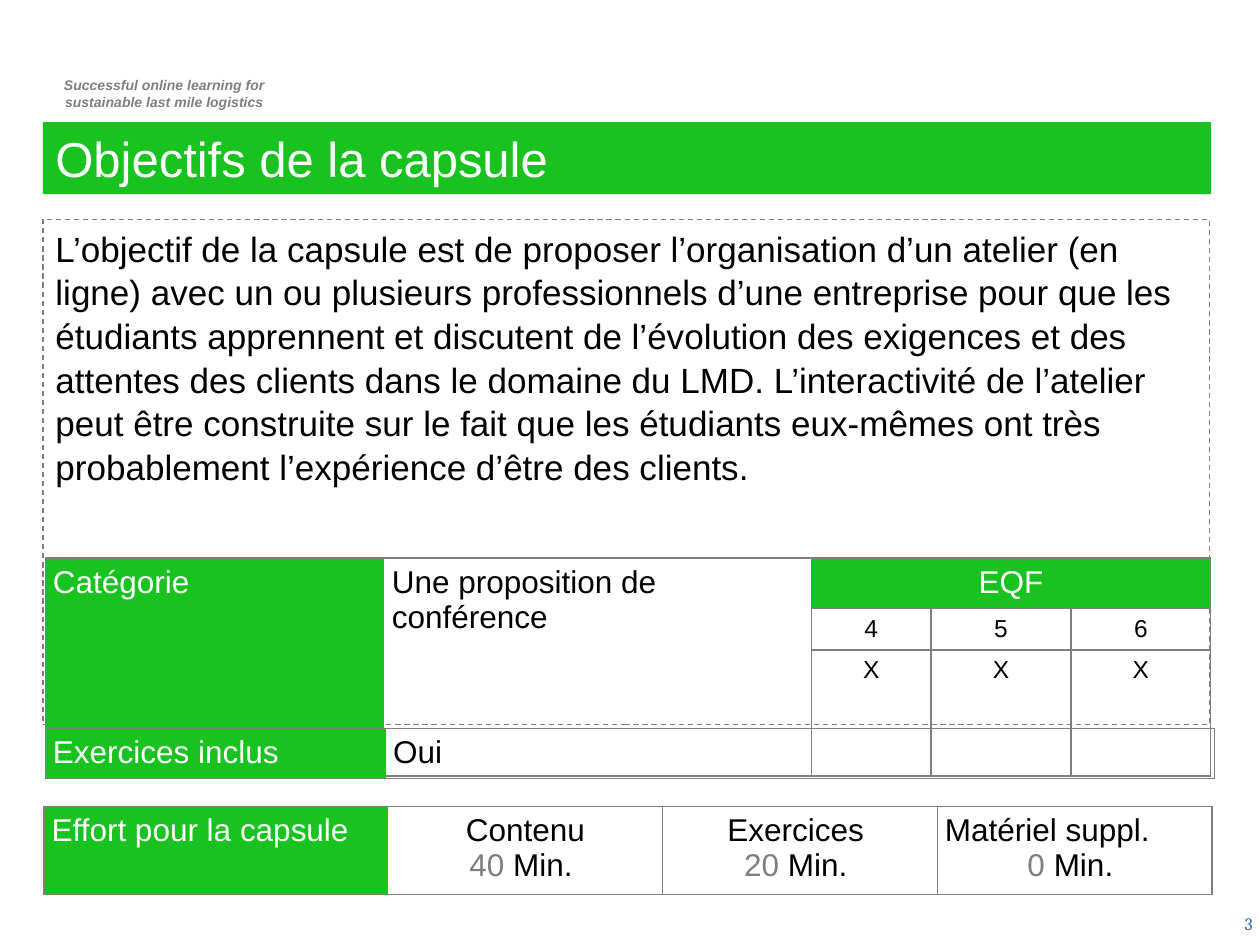
from dataclasses import dataclass

from lxml.etree import SubElement
from pptx import Presentation
from pptx.dml.color import RGBColor as RGB
from pptx.enum.dml import MSO_LINE as Dash
from pptx.enum.text import MSO_ANCHOR as Anchor, MSO_AUTO_SIZE as Fit, PP_ALIGN as Align
from pptx.oxml.ns import qn
from pptx.util import Inches, Pt


@dataclass(frozen=True)
class Theme:
    green: RGB = RGB(0x18, 0xC3, 0x20)
    grey: RGB = RGB(0x7F, 0x7F, 0x7F)
    blue: RGB = RGB(0x33, 0x66, 0xCC)
    white: RGB = RGB(255, 255, 255)
    black: RGB = RGB(0, 0, 0)
    font: str = "Arial"
    serif: str = "Cambria"
    title: int = 28
    body: int = 20
    cell: int = 18
    level: int = 14
    page: int = 10
    tag: int = 8
    rule: float = 0.96


THEME = Theme()
GOAL = (
    "L’objectif de la capsule est de proposer l’organisation d’un atelier (en ligne) "
    "avec un ou plusieurs professionnels d’une entreprise pour que les étudiants "
    "apprennent et discutent de l’évolution des exigences et des attentes des clients "
    "dans le domaine du LMD. L’interactivité de l’atelier peut être construite sur le "
    "fait que les étudiants eux-mêmes ont très probablement l’expérience d’être des clients."
)
EFFORT = [
    ("Contenu", "40 ", Align.CENTER),
    ("Exercices ", "20 ", Align.CENTER),
    ("Matériel suppl.", "0 ", Align.LEFT),
]


def style(para, size, colour, align=Align.LEFT, font=THEME.font):
    para.alignment = align
    for run in para.runs:
        run.font.name = font
        run.font.size = Pt(size)
        run.font.color.rgb = colour


def place(shape, box):
    shape.left, shape.top, shape.width, shape.height = map(Inches, box)
    frame = shape.text_frame
    frame.auto_size = Fit.NONE
    frame.word_wrap = True
    frame.vertical_anchor = Anchor.TOP
    return frame


def add_tag(slide, box):
    frame = place(slide.shapes.add_textbox(0, 0, 0, 0), box)
    frame.text = "Successful online learning for\nsustainable last mile logistics"
    for para in frame.paragraphs:
        style(para, THEME.tag, THEME.grey, Align.CENTER)
        for run in para.runs:
            run.font.bold = run.font.italic = True


def add_page(slide, box):
    frame = place(slide.shapes.add_textbox(0, 0, 0, 0), box)
    frame.vertical_anchor = Anchor.MIDDLE
    frame.text = "3"
    style(frame.paragraphs[0], THEME.page, THEME.blue, Align.RIGHT, THEME.serif)


def add_title(slide, box):
    shape = slide.shapes.title
    frame = place(shape, box)
    shape.fill.solid()
    shape.fill.fore_color.rgb = THEME.green
    frame.text = "Objectifs de la capsule"
    style(frame.paragraphs[0], THEME.title, THEME.white)


def add_goal(slide, box):
    shape = slide.placeholders[1]
    frame = place(shape, box)
    shape.line.color.rgb = THEME.grey
    shape.line.width = Pt(0.75)
    shape.line.dash_style = Dash.DASH
    frame.text = GOAL
    para = frame.paragraphs[0]
    props = para._p.get_or_add_pPr()
    props.set("marL", "0")
    props.set("indent", "0")
    SubElement(props, qn("a:buNone"))
    para.space_before = Pt(0)
    para.line_spacing = 1.04
    style(para, THEME.body, THEME.black)


def edge(cell, col):
    """Rule a cell, leaving the seam beside the label column open."""
    props = cell._tc.get_or_add_tcPr()
    for side in "LRTB":
        line = SubElement(props, qn(f"a:ln{side}"), w=str(Pt(THEME.rule)))
        if (col, side) in ((0, "R"), (1, "L")):
            SubElement(line, qn("a:noFill"))
        else:
            ink = SubElement(line, qn("a:solidFill"))
            SubElement(ink, qn("a:srgbClr"), val=str(THEME.grey))


def add_grid(slide, left, top, cols, rows):
    box = map(Inches, (left, top, sum(cols), sum(rows)))
    table = slide.shapes.add_table(len(rows), len(cols), *box).table
    table.first_row = table.horz_banding = False
    for col, width in zip(table.columns, cols):
        col.width = Inches(width)
    for row, height in zip(table.rows, rows):
        row.height = Inches(height)
        for col, cell in enumerate(row.cells):
            edge(cell, col)
            cell.fill.background()
            cell.margin_left = cell.margin_right = Inches(0.06)
            cell.margin_top = cell.margin_bottom = Inches(0.05)
    return table


def write(cell, text, size=THEME.cell, align=Align.LEFT):
    cell.text = text
    style(cell.text_frame.paragraphs[0], size, THEME.black, align)


def label(cell, text, align=Align.LEFT):
    cell.fill.solid()
    cell.fill.fore_color.rgb = THEME.green
    cell.text = text
    style(cell.text_frame.paragraphs[0], THEME.cell, THEME.white, align)


def add_levels(slide, left, top):
    table = add_grid(slide, left, top, [2.69, 3.39, 0.95, 1.11, 1.11], [0.4, 0.33, 1])
    for col in (0, 1):
        table.cell(0, col).merge(table.cell(2, col))
    table.cell(0, 2).merge(table.cell(0, 4))
    label(table.cell(0, 0), "Catégorie")
    write(table.cell(0, 1), "Une proposition de conférence")
    label(table.cell(0, 2), "EQF", Align.CENTER)
    for col, level in enumerate("456", 2):
        write(table.cell(1, col), level, THEME.level, Align.CENTER)
        write(table.cell(2, col), "X", THEME.level, Align.CENTER)


def add_tasks(slide, left, top):
    table = add_grid(slide, left, top, [2.7, 6.58], [0.4])
    label(table.cell(0, 0), "Exercices inclus")
    write(table.cell(0, 1), "Oui")


def add_effort(slide, left, top):
    table = add_grid(slide, left, top, [2.73] + [2.18] * 3, [0.7])
    label(table.cell(0, 0), "Effort pour la capsule")
    for col, (name, time, align) in enumerate(EFFORT, 1):
        cell = table.cell(0, col)
        write(cell, name, align=align)
        para = cell.text_frame.add_paragraph()
        for text in (time, "Min. "):
            para.add_run().text = text
        style(para, THEME.cell, THEME.black, Align.CENTER)
        para.runs[0].font.color.rgb = THEME.grey


def main():
    deck = Presentation()
    deck.slide_width, deck.slide_height = Inches(10), Inches(7.5)
    slide = deck.slides.add_slide(deck.slide_layouts[1])
    add_tag(slide, (0.29, 0.56, 2.03, 0.37))
    add_page(slide, (7.71, 7.13, 2.33, 0.4))
    add_title(slide, (0.34, 0.97, 9.27, 0.57))
    add_goal(slide, (0.34, 1.74, 9.26, 4.01))
    add_levels(slide, 0.36, 4.43)
    add_tasks(slide, 0.36, 5.78)
    add_effort(slide, 0.35, 6.4)
    deck.save("out.pptx")


if __name__ == "__main__":
    main()
